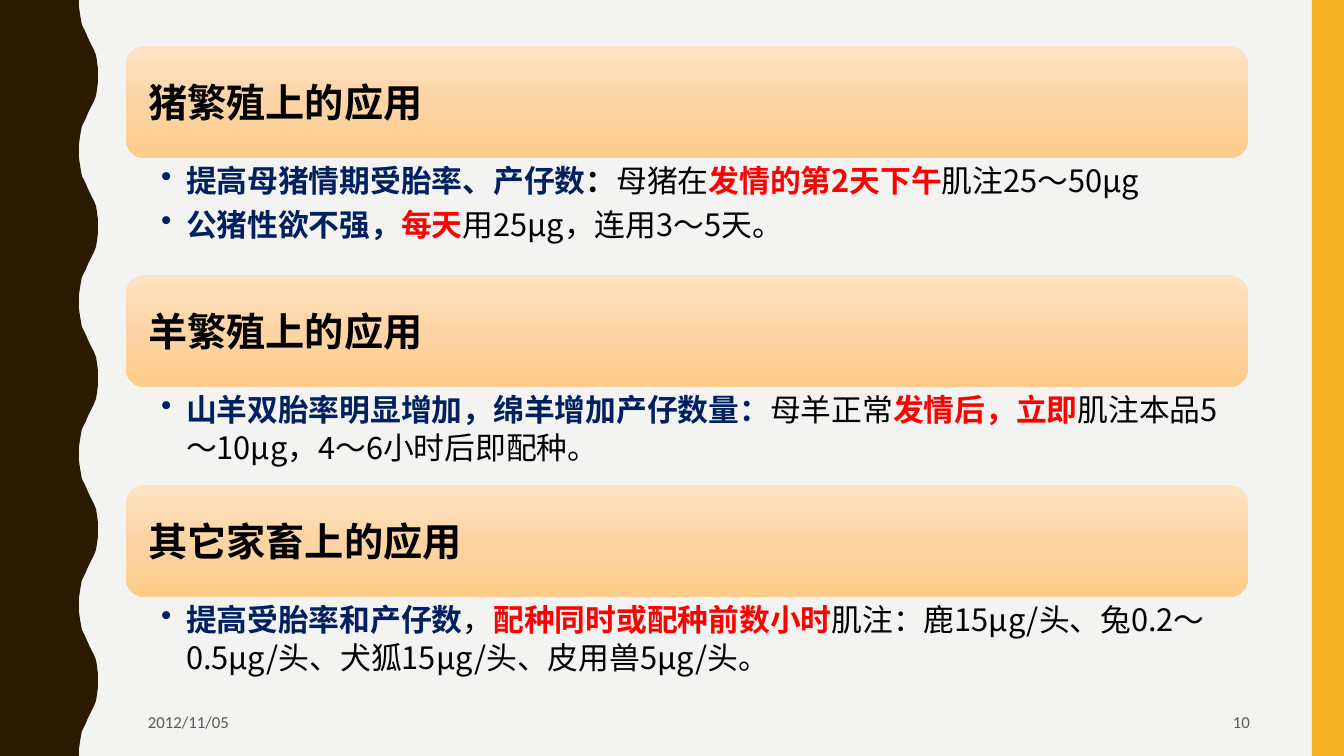
from copy import deepcopy

from lxml import etree
from pptx import Presentation
from pptx import util as u
from pptx.dml.color import RGBColor
from pptx.enum import shapes, text
from pptx.oxml.ns import qn

PX = 914400 / 100.8
WIDTH, HEIGHT = 1344, 756
CJK, LATIN = "Noto Sans CJK SC", "Calibri"
COLORS = {
    "background": "F3F3F2", "wave": "2A1A00", "bar": "F8B323",
    "navy": "002060", "red": "FF0000", "black": "000000", "grey": "595959",
}
CARD_STOPS = [(0, "FEE3C5"), (0.5, "FCD4A4"), (1, "FFCD8B")]
CARD_LEFT, CARD_WIDTH, CARD_HEIGHT = 126, 1122, 112
SECTIONS = [
    (46, 117, "猪繁殖上的应用", [
        [("提高母猪情期受胎率、产仔数", "navy", True), ("：", "black", True),
         ("母猪在", "black", False), ("发情的第2天下午", "red", True),
         ("肌注25～50μg", "black", False)],
        [("公猪性欲不强，", "navy", True), ("每天", "red", True),
         ("用25μg，连用3～5天。", "black", False)],
    ]),
    (275, 99, "羊繁殖上的应用", [
        [("山羊双胎率明显增加，绵羊增加产仔数量：", "navy", True),
         ("母羊正常", "black", False), ("发情后，立即", "red", True),
         ("肌注本品5～10μg，4～6小时后即配种。", "black", False)],
    ]),
    (485, 99, "其它家畜上的应用", [
        [("提高受胎率和产仔数", "navy", True), ("，", "black", False),
         ("配种同时或配种前数小时", "red", True),
         ("肌注：鹿15μg/头、兔0.2～0.5μg/头、犬狐15μg/头、皮用兽5μg/头。", "black", False)],
    ]),
]
FOOTERS = [
    (138, 257, "2012/11/05", text.PP_ALIGN.LEFT),
    (950, 310, "10", text.PP_ALIGN.RIGHT),
]


def px(*lengths):
    return [u.Emu(round(length * PX)) for length in lengths]


def add_text_box(box, insets, anchor):
    frame = slide.shapes.add_textbox(*px(*box)).text_frame
    frame.word_wrap = True
    frame.vertical_anchor = anchor
    frame.margin_left, frame.margin_top, frame.margin_right, frame.margin_bottom = px(*insets)
    return frame


presentation = Presentation()
presentation.slide_width, presentation.slide_height = px(WIDTH, HEIGHT)
slide = presentation.slides.add_slide(presentation.slide_layouts[6])
slide.background.fill.solid()
slide.background.fill.fore_color.rgb = RGBColor.from_string(COLORS["background"])

WAVES = 5
period = HEIGHT / WAVES
half_wave = [
    (79, 0), (79, 7), (80, 14), (81, 20), (82, 25), (84, 29), (86, 33), (88, 38),
    (90, 42), (92, 46), (94, 50), (96, 55), (97, 61), (98, 69), (98, 76),
]
full_wave = half_wave + [(x, period - y) for x, y in reversed(half_wave[:-1])]
edge = [(x, y + i * period) for i in range(WAVES) for x, y in full_wave]
builder = slide.shapes.build_freeform(0, 0, scale=PX)
builder.add_line_segments(edge + [(0, HEIGHT)], close=True)
wave = builder.convert_to_shape()
bar = slide.shapes.add_shape(shapes.MSO_SHAPE.RECTANGLE, *px(1312, 0, 32, HEIGHT))
for shape, color in ((wave, "wave"), (bar, "bar")):
    shape.shadow.inherit = False
    shape.fill.solid()
    shape.fill.fore_color.rgb = RGBColor.from_string(COLORS[color])
    shape.line.fill.background()

for top, body_height, heading, bullets in SECTIONS:
    card = slide.shapes.add_shape(
        shapes.MSO_SHAPE.ROUNDED_RECTANGLE, *px(CARD_LEFT, top, CARD_WIDTH, CARD_HEIGHT))
    card.shadow.inherit = False
    card.line.fill.background()
    card.fill.gradient()
    card.fill.gradient_angle = 270
    stop_list = card.fill._xPr.find(".//" + qn("a:gsLst"))
    stop_list.insert(1, deepcopy(stop_list[0]))
    for stop, (position, color) in zip(card.fill.gradient_stops, CARD_STOPS):
        stop.position = position
        stop.color.rgb = RGBColor.from_string(color)

    frame = card.text_frame
    frame.word_wrap = True
    frame.vertical_anchor = text.MSO_ANCHOR.MIDDLE
    frame.margin_left, frame.margin_right = px(17, 17)
    paragraph = frame.paragraphs[0]
    paragraph.text = heading
    paragraph.alignment = text.PP_ALIGN.LEFT
    paragraph.font.size, paragraph.font.bold = u.Pt(28), True
    paragraph.font.name = CJK
    paragraph.font.color.rgb = RGBColor.from_string(COLORS["black"])
    for run in paragraph.runs:
        etree.SubElement(run._r.get_or_add_rPr(), qn("a:ea"), typeface=CJK)

    frame = add_text_box(
        (CARD_LEFT, top + CARD_HEIGHT, CARD_WIDTH, body_height),
        (35, 3, 17, 3), text.MSO_ANCHOR.TOP)
    for index, runs in enumerate(bullets):
        paragraph = frame.add_paragraph() if index else frame.paragraphs[0]
        paragraph.line_spacing = u.Pt(27)
        paragraph.space_after = u.Pt(4.4)
        paragraph.font.size = u.Pt(22)
        properties = paragraph._p.get_or_add_pPr()
        indent = px(25)[0]
        properties.set("marL", str(indent))
        properties.set("indent", str(-indent))
        bullet = etree.Element(qn("a:buChar"), char="•")
        properties.insert_element_before(bullet, "a:tabLst", "a:defRPr", "a:extLst")
        for words, color, bold in runs:
            run = paragraph.add_run()
            run.text = words
            run.font.size, run.font.bold = u.Pt(22), bold
            run.font.name = LATIN if color == "navy" else CJK
            run.font.color.rgb = RGBColor.from_string(COLORS[color])
            etree.SubElement(run._r.get_or_add_rPr(), qn("a:ea"), typeface=CJK)

for left, width, words, alignment in FOOTERS:
    frame = add_text_box((left, 703, width, 38), (10, 5, 10, 5), text.MSO_ANCHOR.MIDDLE)
    paragraph = frame.paragraphs[0]
    paragraph.text = words
    paragraph.alignment = alignment
    paragraph.font.size, paragraph.font.name = u.Pt(12), LATIN
    paragraph.font.color.rgb = RGBColor.from_string(COLORS["grey"])

presentation.save("out.pptx")
